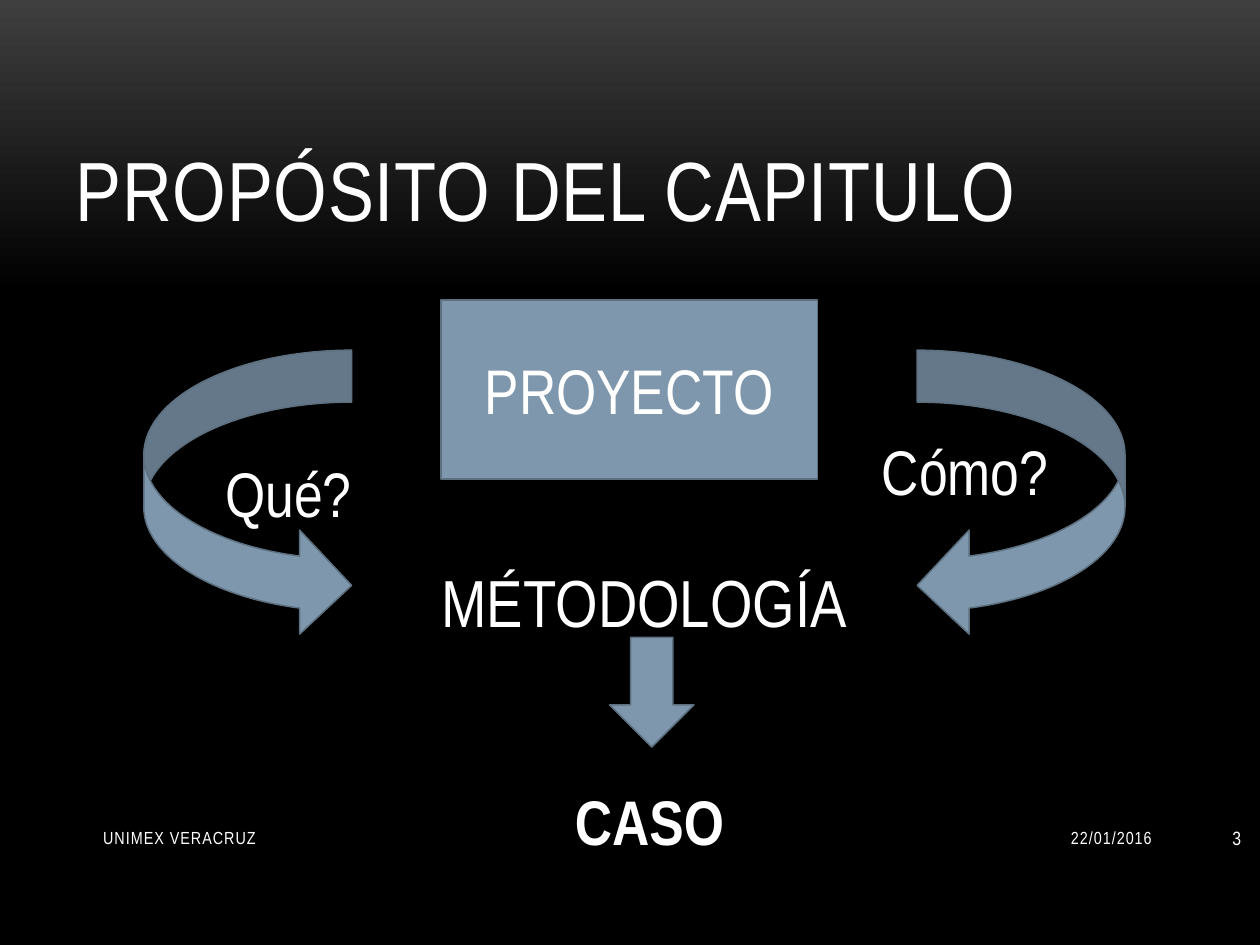
from pptx import Presentation
from pptx.dml.color import RGBColor
from pptx.enum.shapes import MSO_SHAPE
from pptx.enum.text import MSO_ANCHOR, MSO_AUTO_SIZE, PP_ALIGN
from pptx.util import Cm, Pt

HUES = {"top": "3F3F3F", "base": "000000", "text": "FFFFFF",
        "fill": "7E97AD", "edge": "5D7080"}
FACE = "Arial Narrow"


def hue(name):
    """Return the named colour."""
    return RGBColor.from_string(HUES[name])


def write(shape, text, size, align=PP_ALIGN.LEFT, anchor=MSO_ANCHOR.TOP,
          bold=False, gap=0):
    """Put one formatted line of text in a shape; gap is letter spacing in points."""
    frame = shape.text_frame
    frame.text = text
    frame.word_wrap = True
    frame.auto_size = MSO_AUTO_SIZE.NONE
    frame.vertical_anchor = anchor
    line = frame.paragraphs[0]
    line.alignment = align
    run = line.runs[0]
    run.font.name = FACE
    run.font.size = Pt(size)
    run.font.bold = bold
    run.font.color.rgb = hue("text")
    if gap:
        run._r.get_or_add_rPr().set("spc", str(round(gap * 100)))


def paint(slide):
    """Fade the background from grey to black."""
    fill = slide.background.fill
    fill.gradient()
    fill.gradient_angle = 270
    for stop, name, place in zip(fill.gradient_stops, ("top", "base"), (0, 0.31)):
        stop.color.rgb = hue(name)
        stop.position = place


def head(slide, text):
    """Place and format the title."""
    title = slide.shapes.title
    title.left, title.top = Cm(1.27), Cm(0.48)
    title.width, title.height = Cm(22.86), Cm(4.45)
    write(title, text, 48, anchor=MSO_ANCHOR.BOTTOM, gap=0.5)


def label(slide, box, text, size, **style):
    """Add a text box."""
    write(slide.shapes.add_textbox(*map(Cm, box)), text, size, **style)


def block(slide, kind, box):
    """Add a filled and outlined shape."""
    shape = slide.shapes.add_shape(kind, *map(Cm, box))
    shape.shadow.inherit = False
    shape.fill.solid()
    shape.fill.fore_color.rgb = hue("fill")
    shape.line.color.rgb = hue("edge")
    shape.line.width = Pt(0.85)
    return shape


def foot(slide):
    """Add the footer, date and slide number."""
    for left, width, text, size, align, gap in (
            (17.68, 5.79, "22/01/2016", 10, PP_ALIGN.RIGHT, 0.6),
            (1.83, 7.9, "UNIMEX VERACRUZ", 10, PP_ALIGN.LEFT, 0.6),
            (23.72, 1.55, "3", 11, PP_ALIGN.RIGHT, 0)):
        label(slide, (left, 16.38, width, 1.02), text, size,
              align=align, anchor=MSO_ANCHOR.MIDDLE, gap=gap)


def main():
    """Build and save the slide."""
    deck = Presentation()
    deck.slide_width, deck.slide_height = Cm(25.4), Cm(19.05)
    slide = deck.slides.add_slide(deck.slide_layouts[5])
    paint(slide)
    head(slide, "PROPÓSITO DEL CAPITULO")
    foot(slide)
    mid = PP_ALIGN.CENTER
    plan = block(slide, MSO_SHAPE.RECTANGLE, (8.89, 6.05, 7.59, 3.61))
    write(plan, "PROYECTO", 36, mid, MSO_ANCHOR.MIDDLE)
    block(slide, MSO_SHAPE.CURVED_RIGHT_ARROW, (2.9, 7.06, 4.19, 5.79))
    block(slide, MSO_SHAPE.CURVED_LEFT_ARROW, (18.49, 7.06, 4.19, 5.79))
    label(slide, (4.29, 9.04, 4.19, 1.8), "Qué?", 36)
    label(slide, (17.53, 8.59, 4.98, 1.8), "Cómo?", 36)
    label(slide, (7.29, 11.18, 11.4, 1.88), "MÉTODOLOGÍA", 38, align=mid)
    block(slide, MSO_SHAPE.DOWN_ARROW, (12.29, 12.85, 1.7, 2.21))
    label(slide, (8.89, 15.65, 8.41, 1.8), "CASO", 36, align=mid, bold=True)
    deck.save("out.pptx")


if __name__ == "__main__":
    main()
